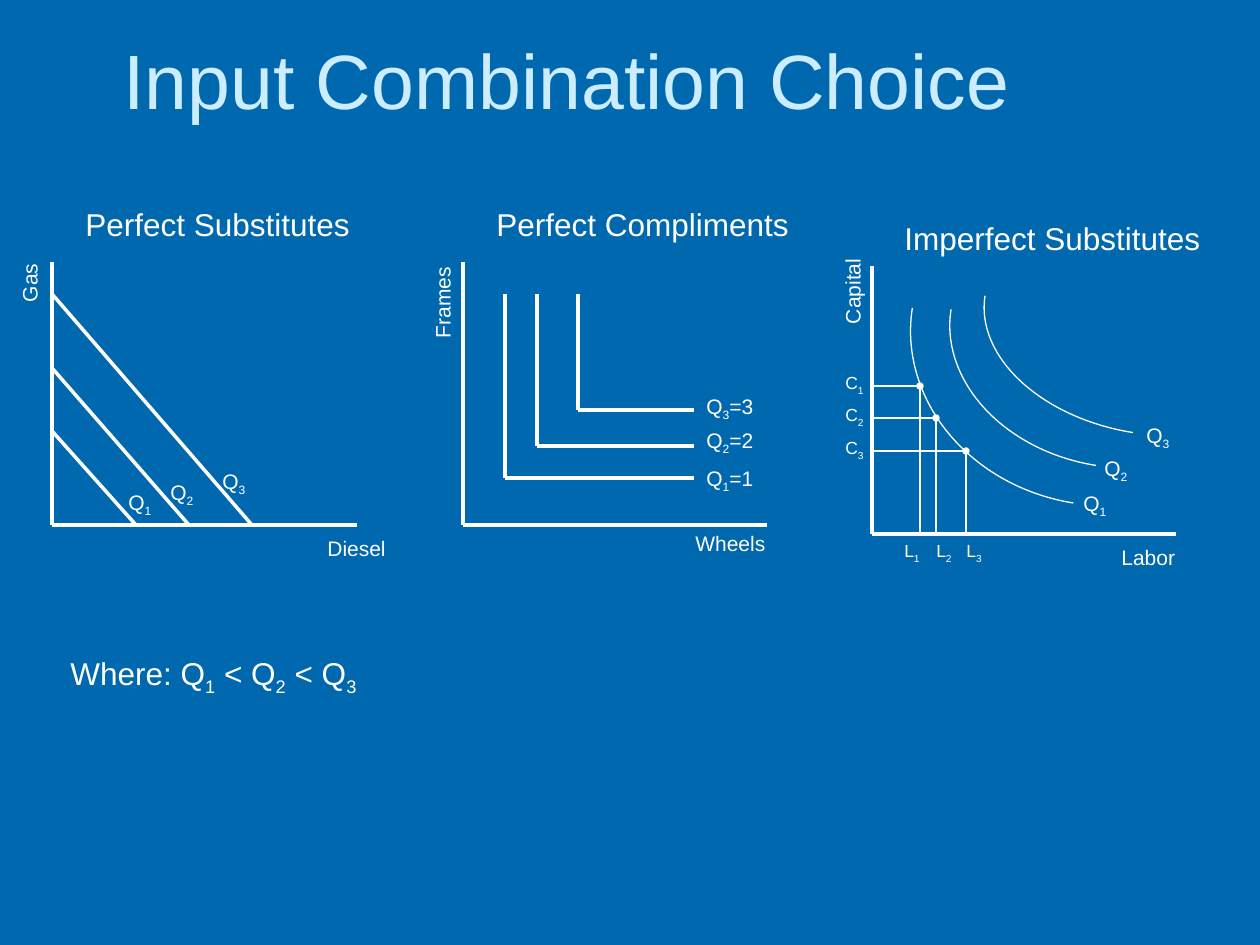
"""Build the slide on input combination choice with three isoquant charts."""
from lxml import etree
from pptx import Presentation
from pptx import util as u
from pptx.dml.color import RGBColor
from pptx.enum import shapes, text
from pptx.oxml import ns

SCALE = 914400 // 126
COLORS = {"background": "0068AE", "title": "CCECFF", "ink": "FFFFFF"}
THICK, THIN = 2, 0.75

TITLE = ("Input Combination Choice", 0, 0, 1134, 158)
AXES = [(52, 262, 525, 357), (463, 262, 525, 767), (872, 266, 534, 1176)]
HEADINGS = [("Perfect Substitutes", 73, 199), ("Perfect Compliments", 484, 199),
            ("Imperfect Substitutes", 892, 213)]
VERTICAL_LABELS = [("Gas", -15, 251, 89), ("Frames", 377, 266, 131),
                   ("Capital", 801, 266, 103)]
HORIZONTAL_LABELS = [("Diesel", 315, 529), ("Wheels", 683, 524), ("Labor", 1109, 538)]
QUANTITY_LABELS = [
    ("Q_1", 116, 483), ("Q_2", 158, 473), ("Q_3", 210, 462),
    ("Q_1=1", 694, 459), ("Q_2=2", 694, 421), ("Q_3=3", 694, 387),
    ("Q_1", 1071, 484), ("Q_2", 1092, 449), ("Q_3", 1134, 416),
]
SUBSTITUTE_LINES = [(431, 136), (368, 189), (294, 252)]
COMPLEMENT_CORNERS = [(505, 478), (537, 446), (578, 410)]
COMPLEMENT_TOP, COMPLEMENT_RIGHT = 294, 694
ISOQUANT_ARCS = [(910, 170, 379, 335), (949, 204, 335, 263), (983, 210, 335, 224)]
ARC_ROTATION = 189
INPUT_POINTS = [(920, 386, 892), (936, 418, 924), (966, 451, 954)]
DOT = 6
NOTE = ("Where: Q_1 < Q_2 < Q_3", 58, 648, 368, 50)


def px(*values):
    return [u.Emu(round(value * SCALE)) for value in values]


def color(name):
    return RGBColor.from_string(COLORS[name])


def add_label(slide, content, left, top, width, height, size, ink="ink", rotation=0):
    shape = slide.shapes.add_textbox(*px(left, top, width, height))
    shape.rotation = rotation
    shape.text_frame.word_wrap = True
    paragraph = shape.text_frame.paragraphs[0]
    font = paragraph.font
    font.name, font.size, font.color.rgb = "Arial", u.Pt(size), color(ink)
    first, *others = content.split("_")
    pieces = [(first, False)]
    for other in others:
        pieces += [(other[0], True), (other[1:], False)]
    for piece, lowered in pieces:
        if piece:
            run = paragraph.add_run()
            run.text = piece
            if lowered:
                run._r.get_or_add_rPr().set("baseline", "-25000")
    return shape


def add_line(slide, start, end, width):
    line = slide.shapes.add_connector(shapes.MSO_CONNECTOR.STRAIGHT, *px(*start, *end))
    line.line.color.rgb = color("ink")
    line.line.width = u.Pt(width)
    etree.SubElement(line._element.spPr, ns.qn("a:effectLst"))


def add_outline(slide, kind, box):
    shape = slide.shapes.add_shape(kind, *px(*box))
    shape.shadow.inherit = False
    shape.fill.background()
    shape.line.color.rgb = color("ink")
    shape.line.width = u.Pt(THIN)
    return shape


def add_labels(slide):
    content, *box = TITLE
    title = add_label(slide, content, *box, 44, "title")
    title.text_frame.vertical_anchor = text.MSO_ANCHOR.MIDDLE
    title.text_frame.paragraphs[0].alignment = text.PP_ALIGN.CENTER
    for content, left, top in HEADINGS:
        add_label(slide, content, left, top, 357, 50, 18)
    for content, left, top, width in VERTICAL_LABELS:
        add_label(slide, content, left, top, width, 38, 12, rotation=270)
    for content, left, top in HORIZONTAL_LABELS:
        add_label(slide, content, left, top, 110, 38, 12)
    for content, left, top in QUANTITY_LABELS:
        add_label(slide, content, left, top, 73, 38, 12)
    add_label(slide, *NOTE, 18)


def add_curves(slide):
    for left, top, bottom, right in AXES:
        add_line(slide, (left, top), (left, bottom), THICK)
        add_line(slide, (right, bottom), (left, bottom), THICK)
    left, _, bottom, _ = AXES[0]
    for height, reach in SUBSTITUTE_LINES:
        add_line(slide, (left, height), (reach, bottom), THICK)
    for x, y in COMPLEMENT_CORNERS:
        add_line(slide, (x, COMPLEMENT_TOP), (x, y), THICK)
        add_line(slide, (COMPLEMENT_RIGHT, y), (x, y), THICK)
    for box in ISOQUANT_ARCS:
        add_outline(slide, shapes.MSO_SHAPE.ARC, box).rotation = ARC_ROTATION


def add_input_points(slide):
    left, _, bottom, _ = AXES[2]
    for number, (x, y, label_left) in enumerate(INPUT_POINTS, 1):
        add_line(slide, (left, y), (x, y), THIN)
        add_line(slide, (x, bottom), (x, y), THIN)
        dot = add_outline(slide, shapes.MSO_SHAPE.OVAL, (x - DOT / 2, y - DOT / 2, DOT, DOT))
        dot.fill.solid()
        dot.fill.fore_color.rgb = color("ink")
        add_label(slide, f"C_{number}", 833, y - 20, 58, 34, 10)
        add_label(slide, f"L_{number}", label_left, bottom, 50, 34, 10)


def main():
    presentation = Presentation()
    presentation.slide_width, presentation.slide_height = px(1260, 945)
    slide = presentation.slides.add_slide(presentation.slide_layouts[6])
    slide.background.fill.solid()
    slide.background.fill.fore_color.rgb = color("background")
    add_labels(slide)
    add_curves(slide)
    add_input_points(slide)
    presentation.save("out.pptx")


if __name__ == "__main__":
    main()
